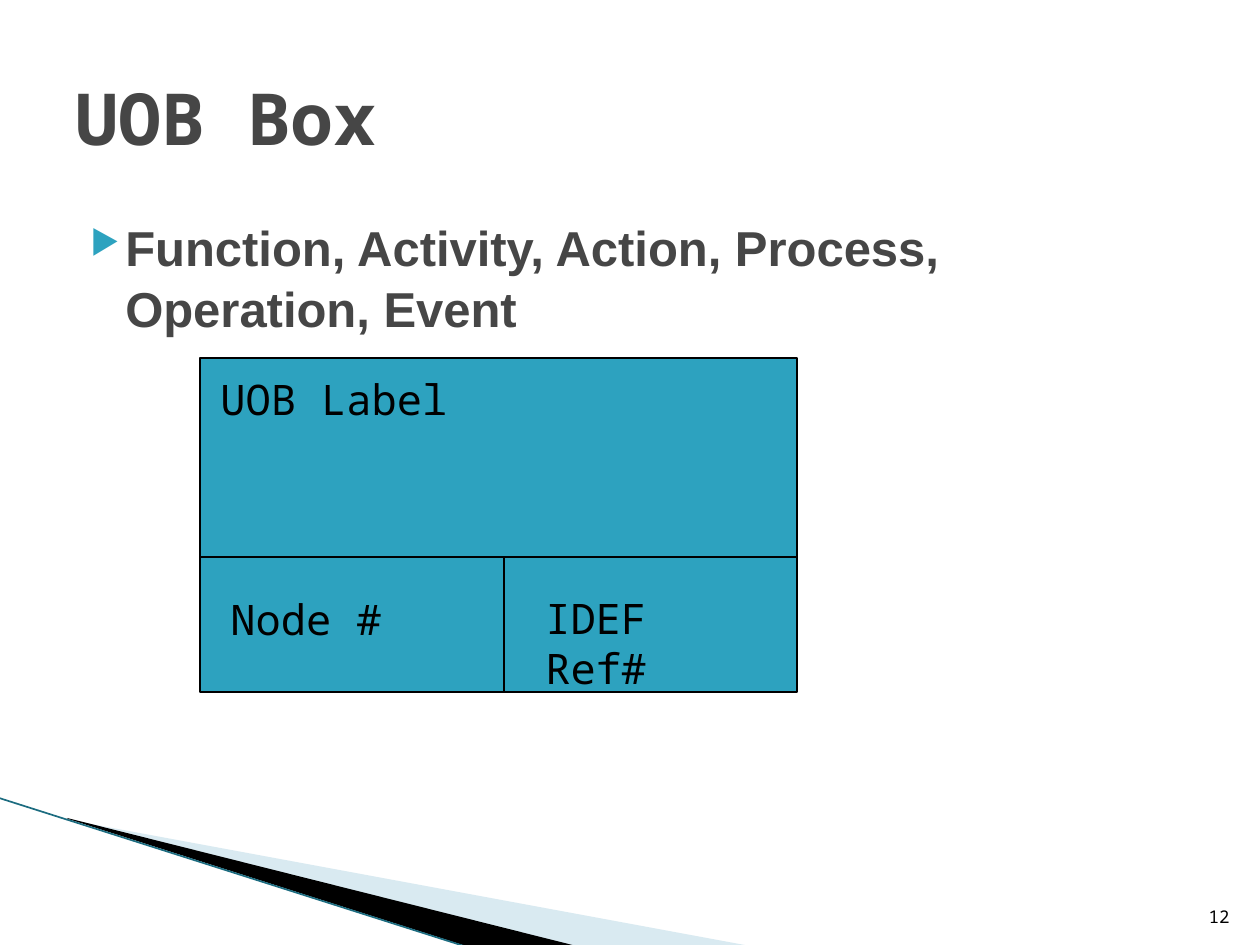
from lxml.etree import SubElement
from pptx import Presentation
from pptx.dml.color import RGBColor
from pptx.enum.shapes import MSO_CONNECTOR, MSO_SHAPE
from pptx.enum.text import MSO_ANCHOR, PP_ALIGN
from pptx.oxml.ns import qn
from pptx.util import Emu, Pt

SCALE = 914400 / 126
WIDTH, HEIGHT = 1260, 945
TEAL = RGBColor(0x2D, 0xA2, 0xBF)
DARK_TEAL = RGBColor(0x1C, 0x6C, 0x80)
PALE_BLUE = RGBColor(0xA0, 0xCB, 0xDC)
GREY = RGBColor(0x46, 0x46, 0x46)
BLACK = RGBColor(0, 0, 0)
MONO, SANS = "Noto Sans Mono", "Arial"


def px(length):
    return Emu(round(length * SCALE))


def add_text(slide, box, text, size=24, font=MONO, color=BLACK, bold=False,
             align=PP_ALIGN.LEFT, anchor=MSO_ANCHOR.TOP, spacing=None, bullet=False):
    frame = slide.shapes.add_textbox(*map(px, box)).text_frame
    frame.word_wrap = True
    frame.vertical_anchor = anchor
    paragraph = frame.paragraphs[0]
    paragraph.alignment = align
    if spacing:
        paragraph.line_spacing = spacing
    if bullet:
        add_bullet(paragraph)
    run = paragraph.add_run()
    run.text = text
    run.font.name, run.font.size, run.font.bold = font, Pt(size), bold
    run.font.color.rgb = color


def add_bullet(paragraph):
    properties = paragraph._p.get_or_add_pPr()
    properties.set("marL", str(px(50)))
    properties.set("indent", str(px(-35)))
    color = SubElement(properties, qn("a:buClr"))
    SubElement(color, qn("a:srgbClr"), val=str(TEAL))
    SubElement(properties, qn("a:buSzPct"), val="68000")
    SubElement(properties, qn("a:buChar"), char="▶")


def add_line(slide, start, end, color=BLACK, width=1):
    line = slide.shapes.add_connector(MSO_CONNECTOR.STRAIGHT, *map(px, start + end))
    line.line.color.rgb, line.line.width = color, Pt(width)
    SubElement(line._element.spPr, qn("a:effectLst"))


def add_wedge(slide, points, color, opacity=100):
    builder = slide.shapes.build_freeform(*points[0], scale=SCALE)
    builder.add_line_segments(points[1:], close=True)
    wedge = builder.convert_to_shape()
    wedge.shadow.inherit = False
    wedge.fill.solid()
    wedge.fill.fore_color.rgb = color
    wedge.line.fill.background()
    if opacity < 100:
        rgb = wedge._element.spPr.find(qn("a:solidFill")).find(qn("a:srgbClr"))
        SubElement(rgb, qn("a:alpha"), val=str(opacity * 1000))


def corner_decoration(slide, left, top):
    """Draws the wedges that run from the left edge to the slide bottom."""
    def shifted(*points):
        return [(left + x, top + y) for x, y in points]

    add_wedge(slide, shifted((69, 22), (750, 148), (575, 148), (69, 21)), PALE_BLUE, 40)
    add_wedge(slide, shifted((67, 20), (576, 148), (469, 149), (68, 21)), BLACK)
    add_line(slide, *shifted((-1, 0), (467, 149)), color=DARK_TEAL, width=0.95)


def uob_box(slide, left, top, width, height):
    """Draws a box with a label above and two reference cells below."""
    box = slide.shapes.add_shape(MSO_SHAPE.RECTANGLE, *map(px, (left, top, width, height)))
    box.shadow.inherit = False
    box.fill.solid()
    box.fill.fore_color.rgb = TEAL
    box.line.color.rgb, box.line.width = BLACK, Pt(1)

    divider_x, divider_y = left + 304, top + 199
    add_line(slide, (left, divider_y), (left + width, divider_y))
    add_line(slide, (divider_x, divider_y), (divider_x, top + height))

    add_text(slide, (left + 8, top + 9, 422, 63), "UOB Label")
    add_text(slide, (left + 18, divider_y + 30, 180, 63), "Node #")
    add_text(slide, (divider_x + 29, divider_y + 29, 210, 63), "IDEF Ref#")


def main():
    deck = Presentation()
    deck.slide_width, deck.slide_height = px(WIDTH), px(HEIGHT)
    slide = deck.slides.add_slide(deck.slide_layouts[6])
    corner_decoration(slide, 0, 798)
    add_text(slide, (63, 208, 1134, 164), "Function, Activity, Action, Process, Operation, Event",
             size=28, font=SANS, color=GREY, bold=True, spacing=1.05, bullet=True)
    add_text(slide, (63, 38, 1134, 157), "UOB Box", size=41, color=GREY, bold=True,
             anchor=MSO_ANCHOR.MIDDLE)
    uob_box(slide, 200, 358, 597, 334)
    add_text(slide, (1192, 883, 50, 50), "12", size=10, align=PP_ALIGN.RIGHT,
             anchor=MSO_ANCHOR.BOTTOM)
    deck.save("out.pptx")


if __name__ == "__main__":
    main()
